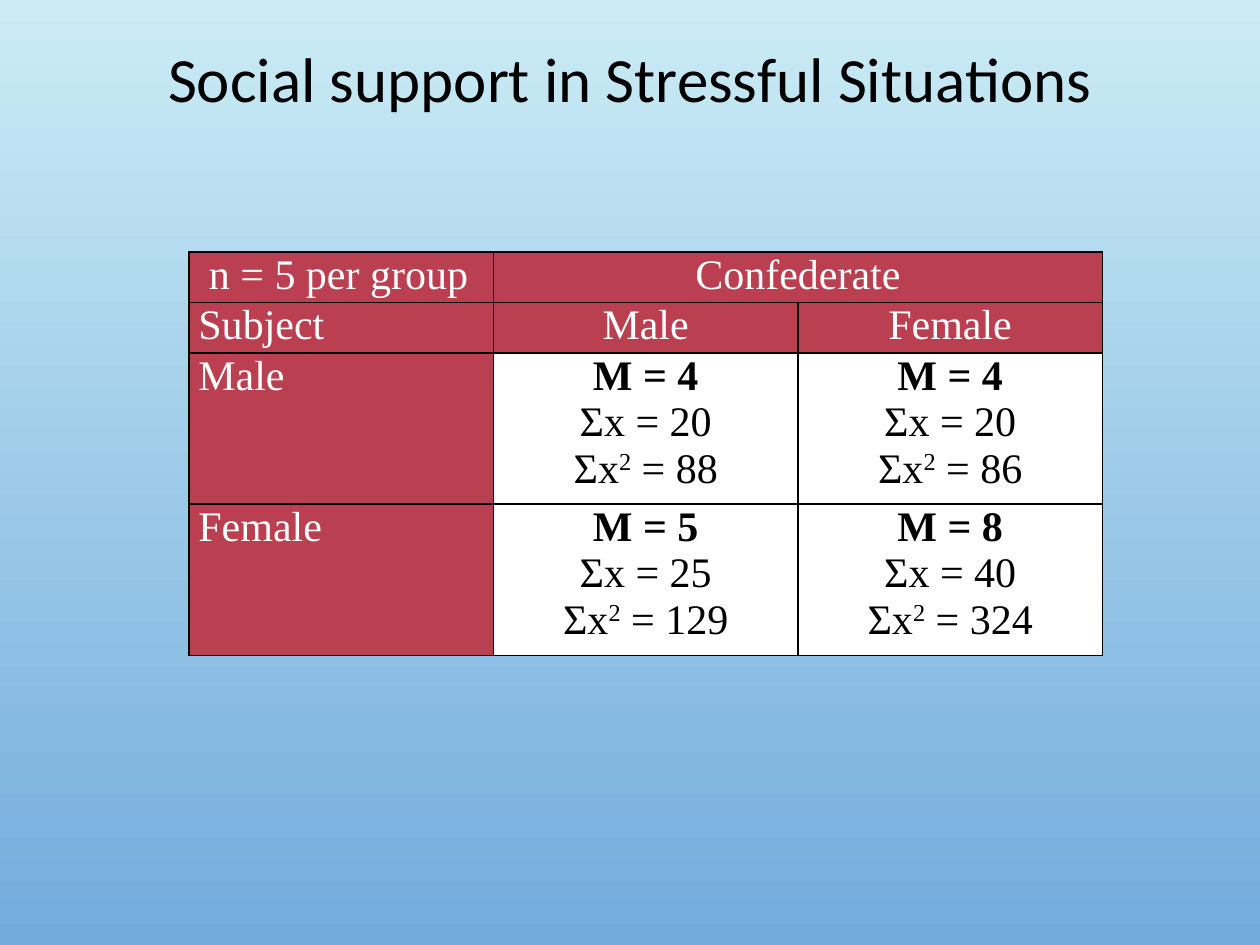
import lxml.etree
import pptx
import pptx.dml.color
import pptx.enum.text
import pptx.oxml.ns
import pptx.util

Pt = pptx.util.Pt
RGBColor = pptx.dml.color.RGBColor
Align = pptx.enum.text.PP_ALIGN

SKY_TOP = RGBColor(0xCB, 0xEC, 0xF5)
SKY_BOTTOM = RGBColor(0x73, 0xAB, 0xDD)
HEADER_RED = RGBColor(0xBA, 0x3F, 0x51)
WHITE = RGBColor(0xFF, 0xFF, 0xFF)
BLACK = RGBColor(0x00, 0x00, 0x00)

LINE_HEIGHT = 26.5
COLUMN_WIDTH = 174
GROUPS = [
    ("Male", [(4, 20, 88), (4, 20, 86)]),
    ("Female", [(5, 25, 129), (8, 40, 324)]),
]


def set_background(slide):
    """Fill the slide with a gradient from top to bottom."""
    fill = slide.background.fill
    fill.gradient()
    fill.gradient_angle = 270
    for stop, color, position in zip(fill.gradient_stops, (SKY_TOP, SKY_BOTTOM), (0, 1)):
        stop.color.rgb = color
        stop.position = position


def add_run(paragraph, text, color, bold=False, superscript=False):
    """Append a run in the table's font."""
    run = paragraph.add_run()
    run.text = text
    run.font.name = "Times New Roman"
    run.font.size = Pt(24)
    run.font.bold = bold
    run.font.color.rgb = color
    if superscript:
        run._r.get_or_add_rPr().set("baseline", "30000")


def add_title(slide, text):
    """Add the centred slide title."""
    text_frame = slide.shapes.add_textbox(Pt(36), Pt(21.6), Pt(648), Pt(50.4)).text_frame
    text_frame.word_wrap = True
    text_frame.vertical_anchor = pptx.enum.text.MSO_ANCHOR.MIDDLE
    text_frame.text = text
    paragraph = text_frame.paragraphs[0]
    paragraph.alignment = Align.CENTER
    paragraph.line_spacing = 0.9
    font = paragraph.runs[0].font
    font.name = "Calibri"
    font.size = Pt(36)
    font.color.rgb = BLACK


def style_cell(cell, color):
    """Give a cell its fill, margins and black borders."""
    cell.fill.solid()
    cell.fill.fore_color.rgb = color
    cell.margin_left = cell.margin_right = Pt(5.4)
    cell.margin_top = cell.margin_bottom = Pt(0)
    qn = pptx.oxml.ns.qn
    properties = cell._tc.get_or_add_tcPr()
    for index, side in enumerate("LRTB"):
        line = lxml.etree.Element(qn(f"a:ln{side}"), w=str(Pt(1)))
        solid = lxml.etree.SubElement(line, qn("a:solidFill"))
        lxml.etree.SubElement(solid, qn("a:srgbClr"), val=str(BLACK))
        properties.insert(index, line)


def write_header(cell, text, alignment):
    """Write a white heading in a cell."""
    paragraph = cell.text_frame.paragraphs[0]
    paragraph.alignment = alignment
    add_run(paragraph, text, WHITE)


def write_statistics(cell, mean, total, squares):
    """Write the mean, the sum and the sum of squares in a cell."""
    text_frame = cell.text_frame
    paragraphs = [text_frame.paragraphs[0], text_frame.add_paragraph(), text_frame.add_paragraph()]
    for paragraph in paragraphs:
        paragraph.alignment = Align.CENTER
    add_run(paragraphs[0], f"M = {mean}", BLACK, bold=True)
    add_run(paragraphs[1], f"Σx = {total}", BLACK)
    add_run(paragraphs[2], "Σx", BLACK)
    add_run(paragraphs[2], "2", BLACK, superscript=True)
    add_run(paragraphs[2], f" = {squares}", BLACK)


def add_results_table(slide):
    """Add the table of subject by confederate results."""
    line_counts = [1, 1, 3, 3]
    frame = slide.shapes.add_table(
        4, 3, Pt(108), Pt(144), Pt(3 * COLUMN_WIDTH), Pt(sum(line_counts) * LINE_HEIGHT))
    table = frame.table
    for column in table.columns:
        column.width = Pt(COLUMN_WIDTH)
    for row_index, (row, lines) in enumerate(zip(table.rows, line_counts)):
        row.height = Pt(lines * LINE_HEIGHT)
        for column_index, cell in enumerate(row.cells):
            is_header = row_index < 2 or column_index == 0
            style_cell(cell, HEADER_RED if is_header else WHITE)
    table.cell(0, 1).merge(table.cell(0, 2))
    write_header(table.cell(0, 0), " n = 5 per group", Align.LEFT)
    write_header(table.cell(0, 1), "Confederate", Align.CENTER)
    write_header(table.cell(1, 0), "Subject", Align.LEFT)
    for index, (name, results) in enumerate(GROUPS):
        write_header(table.cell(1, index + 1), name, Align.CENTER)
        write_header(table.cell(index + 2, 0), name, Align.LEFT)
        for column_index, statistics in enumerate(results, start=1):
            write_statistics(table.cell(index + 2, column_index), *statistics)


def main():
    """Build and save the presentation."""
    presentation = pptx.Presentation()
    presentation.slide_width = Pt(720)
    presentation.slide_height = Pt(540)
    slide = presentation.slides.add_slide(presentation.slide_layouts[6])
    set_background(slide)
    add_title(slide, "Social support in Stressful Situations")
    add_results_table(slide)
    presentation.save("out.pptx")


if __name__ == "__main__":
    main()
